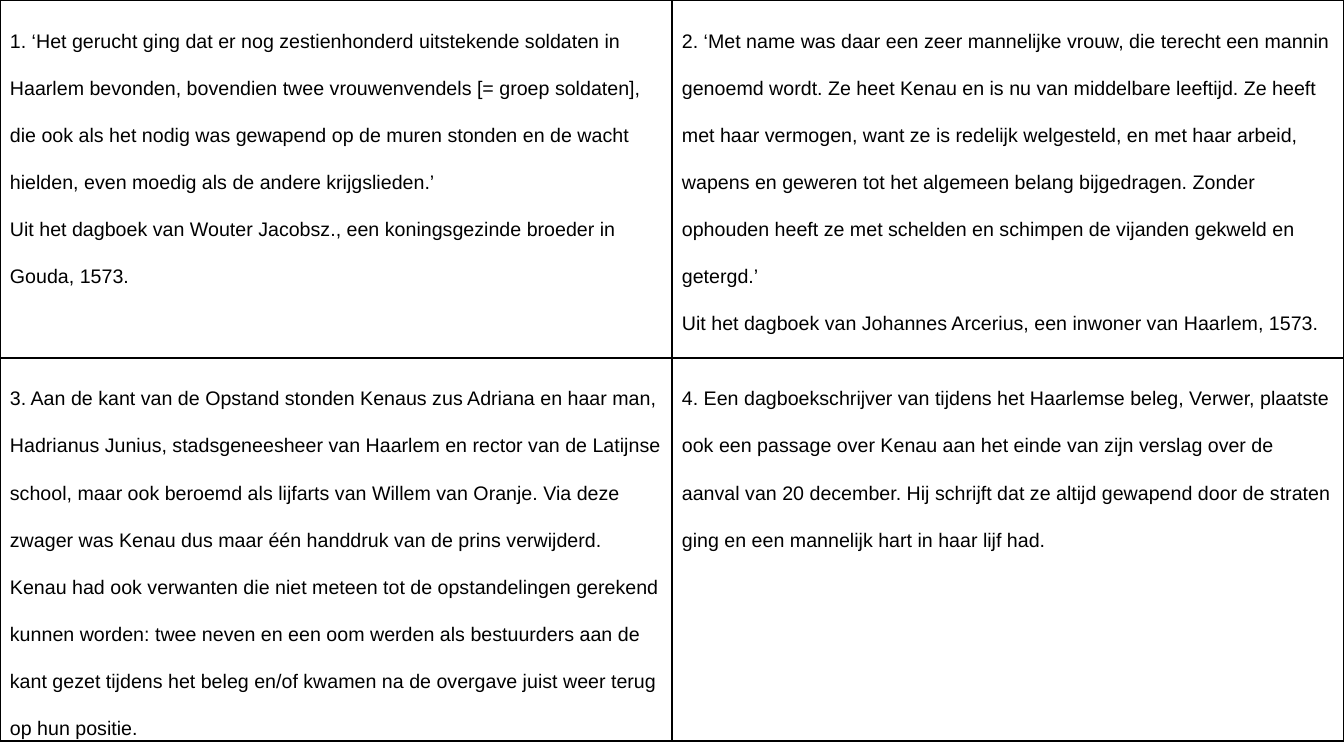
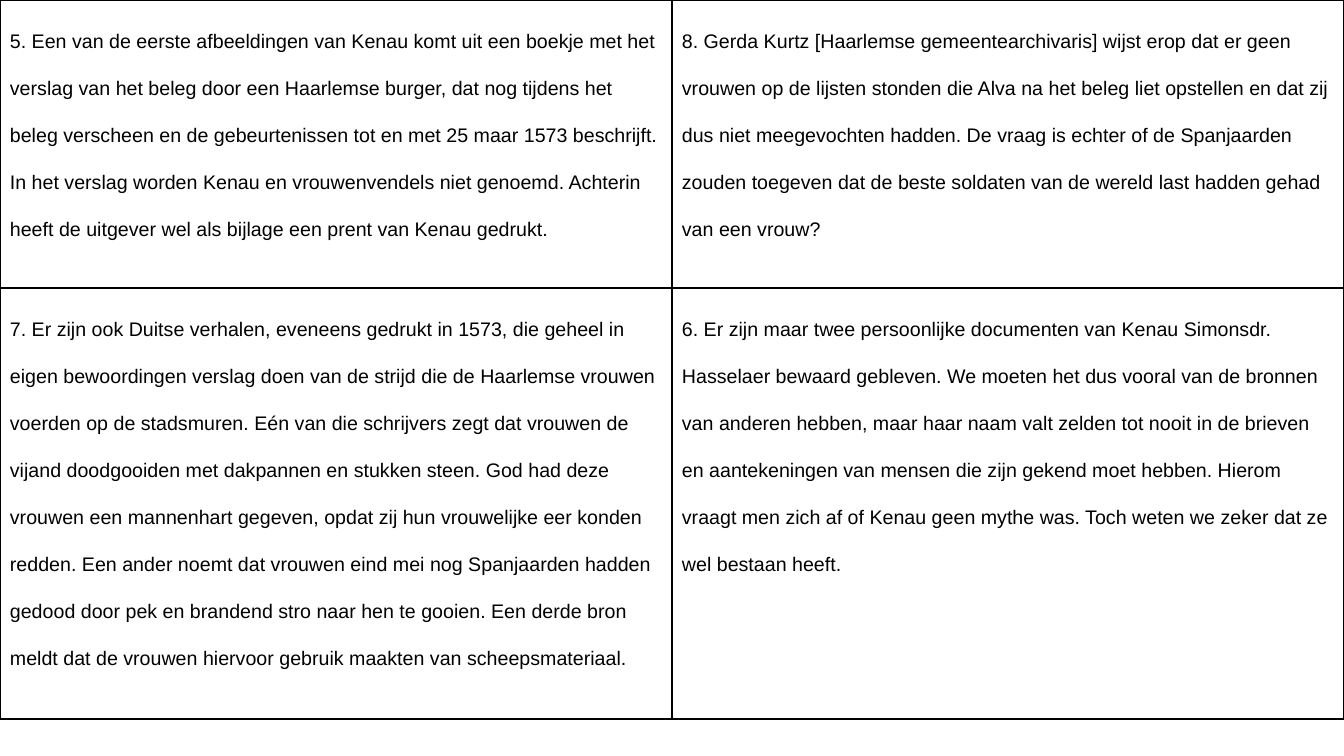
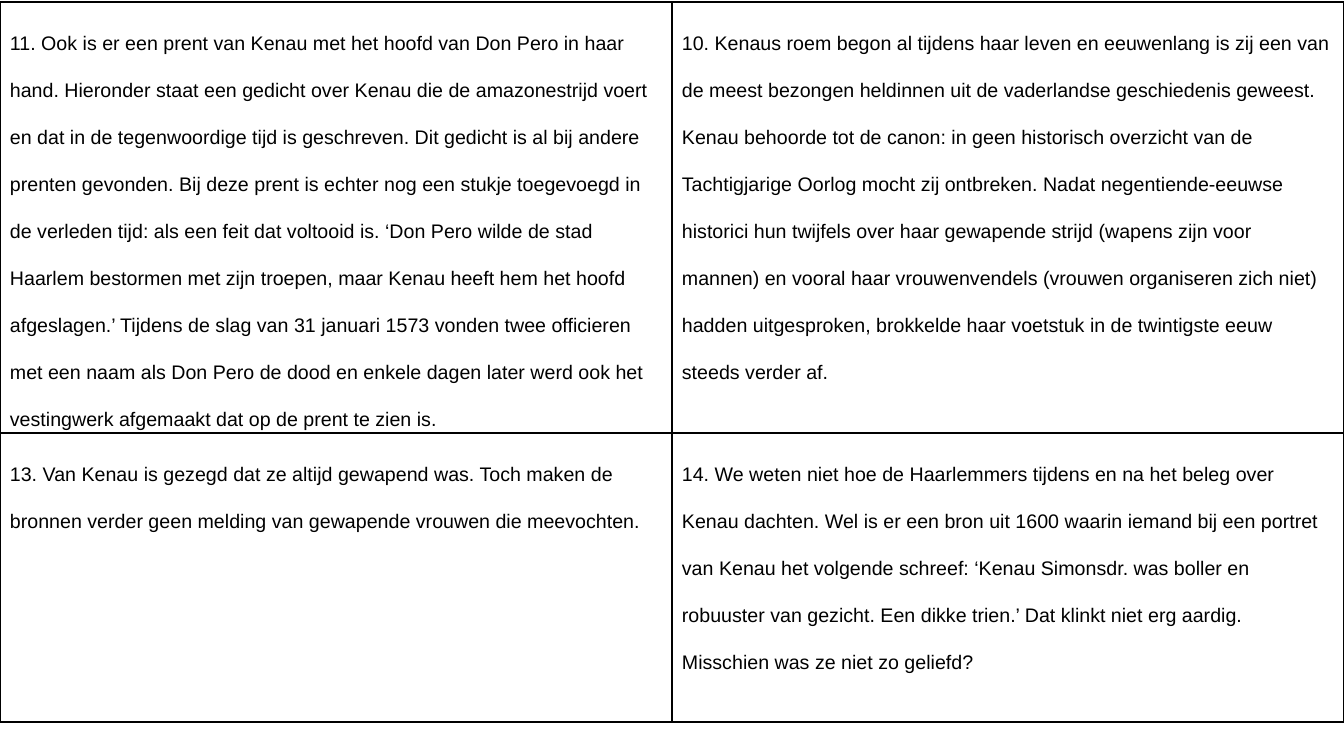
from dataclasses import dataclass

from pptx import Presentation
from pptx.dml.color import RGBColor
from pptx.enum.shapes import MSO_SHAPE
from pptx.enum.text import MSO_ANCHOR, MSO_AUTO_SIZE, PP_ALIGN
from pptx.util import Inches, Length, Pt

RECT = MSO_SHAPE.RECTANGLE
TOP = MSO_ANCHOR.TOP
LEFT = PP_ALIGN.LEFT
GROW = MSO_AUTO_SIZE.SHAPE_TO_FIT_TEXT


@dataclass(frozen=True)
class Theme:
    font: str = "Arial"
    size: Length = Pt(14)
    line_spacing: float = 2.0
    border: Length = Pt(1.5)
    ink: RGBColor = RGBColor(0x00, 0x00, 0x00)
    paper: RGBColor = RGBColor(0xFF, 0xFF, 0xFF)


@dataclass(frozen=True)
class CardRow:
    top: Length
    height: Length
    cards: tuple[str, ...]


THEME = Theme()

SLIDES = (
    (
        CardRow(Inches(0), Inches(3.8), (
            "1. ‘Het gerucht ging dat er nog zestienhonderd uitstekende soldaten in "
            "Haarlem bevonden, bovendien twee vrouwenvendels [= groep soldaten], die ook "
            "als het nodig was gewapend op de muren stonden en de wacht hielden, even "
            "moedig als de andere krijgslieden.’\n"
            "Uit het dagboek van Wouter Jacobsz., een koningsgezinde broeder in Gouda, 1573.",
            "2. ‘Met name was daar een zeer mannelijke vrouw, die terecht een mannin "
            "genoemd wordt. Ze heet Kenau en is nu van middelbare leeftijd. Ze heeft met "
            "haar vermogen, want ze is redelijk welgesteld, en met haar arbeid, wapens en "
            "geweren tot het algemeen belang bijgedragen. Zonder ophouden heeft ze met "
            "schelden en schimpen de vijanden gekweld en getergd.’\n"
            "Uit het dagboek van Johannes Arcerius, een inwoner van Haarlem, 1573.",
        )),
        CardRow(Inches(3.55), Inches(3.8), (
            "3. Aan de kant van de Opstand stonden Kenaus zus Adriana en haar man, "
            "Hadrianus Junius, stadsgeneesheer van Haarlem en rector van de Latijnse "
            "school, maar ook beroemd als lijfarts van Willem van Oranje. Via deze zwager "
            "was Kenau dus maar één handdruk van de prins verwijderd. Kenau had ook "
            "verwanten die niet meteen tot de opstandelingen gerekend kunnen worden: twee "
            "neven en een oom werden als bestuurders aan de kant gezet tijdens het beleg "
            "en/of kwamen na de overgave juist weer terug op hun positie.",
            "4. Een dagboekschrijver van tijdens het Haarlemse beleg, Verwer, plaatste "
            "ook een passage over Kenau aan het einde van zijn verslag over de aanval van "
            "20 december. Hij schrijft dat ze altijd gewapend door de straten ging en een "
            "mannelijk hart in haar lijf had.",
        )),
    ),
    (
        CardRow(Inches(0), Inches(2.86), (
            "5. Een van de eerste afbeeldingen van Kenau komt uit een boekje met het "
            "verslag van het beleg door een Haarlemse burger, dat nog tijdens het beleg "
            "verscheen en de gebeurtenissen tot en met 25 maar 1573 beschrijft. In het "
            "verslag worden Kenau en vrouwenvendels niet genoemd. Achterin heeft de "
            "uitgever wel als bijlage een prent van Kenau gedrukt.",
            "8. Gerda Kurtz [Haarlemse gemeentearchivaris] wijst erop dat er geen vrouwen "
            "op de lijsten stonden die Alva na het beleg liet opstellen en dat zij dus "
            "niet meegevochten hadden. De vraag is echter of de Spanjaarden zouden "
            "toegeven dat de beste soldaten van de wereld last hadden gehad van een vrouw?",
        )),
        CardRow(Inches(2.86), Inches(4.27), (
            "7. Er zijn ook Duitse verhalen, eveneens gedrukt in 1573, die geheel in "
            "eigen bewoordingen verslag doen van de strijd die de Haarlemse vrouwen "
            "voerden op de stadsmuren. Eén van die schrijvers zegt dat vrouwen de vijand "
            "doodgooiden met dakpannen en stukken steen. God had deze vrouwen een "
            "mannenhart gegeven, opdat zij hun vrouwelijke eer konden redden. Een ander "
            "noemt dat vrouwen eind mei nog Spanjaarden hadden gedood door pek en "
            "brandend stro naar hen te gooien. Een derde bron meldt dat de vrouwen "
            "hiervoor gebruik maakten van scheepsmateriaal.",
            "6. Er zijn maar twee persoonlijke documenten van Kenau Simonsdr. Hasselaer "
            "bewaard gebleven. We moeten het dus vooral van de bronnen van anderen "
            "hebben, maar haar naam valt zelden tot nooit in de brieven en aantekeningen "
            "van mensen die zijn gekend moet hebben. Hierom vraagt men zich af of Kenau "
            "geen mythe was. Toch weten we zeker dat ze wel bestaan heeft.",
        )),
    ),
    (
        CardRow(Inches(0.02), Inches(4.28), (
            "11. Ook is er een prent van Kenau met het hoofd van Don Pero in haar hand. "
            "Hieronder staat een gedicht over Kenau die de amazonestrijd voert en dat in "
            "de tegenwoordige tijd is geschreven. Dit gedicht is al bij andere prenten "
            "gevonden. Bij deze prent is echter nog een stukje toegevoegd in de verleden "
            "tijd: als een feit dat voltooid is. ‘Don Pero wilde de stad Haarlem "
            "bestormen met zijn troepen, maar Kenau heeft hem het hoofd afgeslagen.’ "
            "Tijdens de slag van 31 januari 1573 vonden twee officieren met een naam als "
            "Don Pero de dood en enkele dagen later werd ook het vestingwerk afgemaakt "
            "dat op de prent te zien is.",
            "10. Kenaus roem begon al tijdens haar leven en eeuwenlang is zij een van de "
            "meest bezongen heldinnen uit de vaderlandse geschiedenis geweest. Kenau "
            "behoorde tot de canon: in geen historisch overzicht van de Tachtigjarige "
            "Oorlog mocht zij ontbreken. Nadat negentiende-eeuwse historici hun twijfels "
            "over haar gewapende strijd (wapens zijn voor mannen) en vooral haar "
            "vrouwenvendels (vrouwen organiseren zich niet) hadden uitgesproken, "
            "brokkelde haar voetstuk in de twintigste eeuw steeds verder af.",
        )),
        CardRow(Inches(4.3), Inches(2.86), (
            "13. Van Kenau is gezegd dat ze altijd gewapend was. Toch maken de bronnen "
            "verder geen melding van gewapende vrouwen die meevochten.",
            "14. We weten niet hoe de Haarlemmers tijdens en na het beleg over Kenau "
            "dachten. Wel is er een bron uit 1600 waarin iemand bij een portret van Kenau "
            "het volgende schreef: ‘Kenau Simonsdr. was boller en robuuster van gezicht. "
            "Een dikke trien.’ Dat klinkt niet erg aardig. Misschien was ze niet zo "
            "geliefd?",
        )),
    ),
)


def write_text(tf, text: str, *, font: str = THEME.font, size: Length = THEME.size,
               color: RGBColor = THEME.ink, line_spacing: float = THEME.line_spacing,
               align: PP_ALIGN = LEFT) -> None:
    tf.text = text
    for p in tf.paragraphs:
        p.alignment = align
        p.line_spacing = line_spacing
        for r in p.runs:
            r.font.name = font
            r.font.size = size
            r.font.color.rgb = color


def add_card(slide, left: Length, top: Length, width: Length, height: Length,
             text: str) -> None:
    sp = slide.shapes.add_shape(RECT, left, top, width, height)
    sp.shadow.inherit = False
    sp.fill.solid()
    sp.fill.fore_color.rgb = THEME.paper
    sp.line.color.rgb = THEME.ink
    sp.line.width = THEME.border
    tf = sp.text_frame
    tf.word_wrap = True
    tf.auto_size = GROW
    tf.vertical_anchor = TOP
    write_text(tf, text)


def add_card_slide(prs, rows: tuple[CardRow, ...]) -> None:
    slide = prs.slides.add_slide(prs.slide_layouts[6])
    for row in rows:
        width = prs.slide_width // len(row.cards)
        for col, text in enumerate(row.cards):
            add_card(slide, col * width, row.top, width, row.height, text)


def main() -> None:
    prs = Presentation()
    prs.slide_width = Inches(13.33)
    prs.slide_height = Inches(7.5)
    for rows in SLIDES:
        add_card_slide(prs, rows)
    prs.save("out.pptx")


if __name__ == "__main__":
    main()
